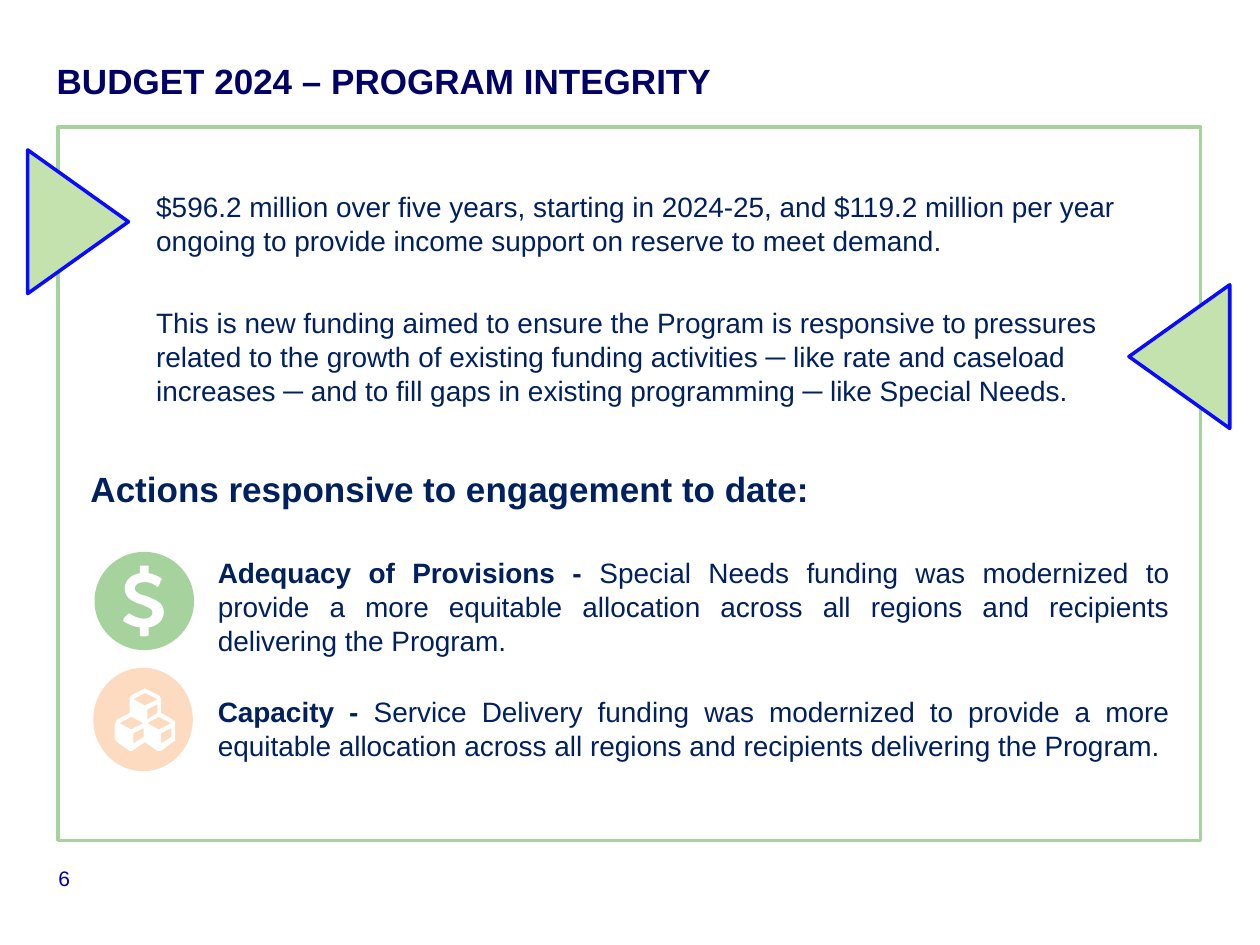
from pptx import Presentation
from pptx.dml.color import RGBColor
from pptx.enum.shapes import MSO_SHAPE
from pptx.enum.text import PP_ALIGN
from pptx.util import Pt

PX = 9144
NAVY = "002060"
GREEN = "A6D39D"
BODY_LINE = 19.4

FUNDING = [
    "$596.2 million over five years, starting in 2024-25, and $119.2 million per year "
    "ongoing to provide income support on reserve to meet demand.",
    "This is new funding aimed to ensure the Program is responsive to pressures related "
    "to the growth of existing funding activities ─ like rate and caseload increases ─ "
    "and to fill gaps in existing programming ─ like Special Needs.",
]
ACTIONS = [
    ("Adequacy of Provisions - ",
     "Special Needs funding was modernized to provide a more equitable allocation "
     "across all regions and recipients delivering the Program."),
    ("Capacity - ",
     "Service Delivery funding was modernized to provide a more equitable allocation "
     "across all regions and recipients delivering the Program."),
]
DOLLAR = [
    (20, 49), (20, 55), (20, 55, 19, 56, 18, 56), (14, 56), (13, 56, 13, 55, 13, 55),
    (13, 49), (5, 48, 0, 44, 0, 44), (0, 43, 0, 43, 0, 42), (4, 38), (5, 38),
    (5, 38, 10, 42, 16, 42), (19, 42, 23, 41, 23, 37), (23, 34, 19, 33, 15, 31),
    (8, 29, 1, 26, 1, 18), (1, 12, 6, 7, 13, 6), (13, 0), (18, 0), (20, 0), (20, 6),
    (26, 7, 30, 10, 30, 10), (31, 11, 31, 11, 30, 11), (28, 16),
    (27, 16, 27, 17, 27, 17), (27, 17, 26, 17, 26, 16), (26, 16, 22, 13, 17, 13),
    (12, 13, 9, 15, 9, 18), (9, 21, 13, 23, 18, 24), (25, 27, 32, 29, 32, 37),
    (32, 43, 27, 48, 20, 49),
]
CUBES = [
    (48, 27), (46, 25), (37, 20), (37, 9), (36, 7), (35, 6), (25, 1), (24, 0), (23, 1),
    (13, 6), (12, 7), (12, 20), (2, 25), (1, 27), (0, 29), (0, 40), (1, 42), (2, 43),
    (12, 50), (14, 50), (24, 43), (34, 50), (37, 50), (46, 43), (48, 42), (48, 29),
]
CUBE_FACES = [
    [(15, 9), (24, 4), (34, 9), (24, 14)],
    [(26, 17), (34, 13), (34, 20), (26, 25)],
]
CUBE_OFFSETS = [(0, 0), (11, 19), (-11, 19)]


def color(value):
    return RGBColor.from_string(value)


def paint(shape, fill=None, line=None):
    shape.shadow.inherit = False
    if fill:
        shape.fill.solid()
        shape.fill.fore_color.rgb = color(fill)
    else:
        shape.fill.background()
    if line:
        shape.line.color.rgb = color(line)
        shape.line.width = Pt(2)
    else:
        shape.line.fill.background()


def add_shape(slide, kind, box, fill=None, line=None):
    shape = slide.shapes.add_shape(kind, *(value * PX for value in box))
    paint(shape, fill, line)
    return shape


def add_text(slide, box, paragraphs, size, text_color, bold=False, line_height=None,
             gap=0, align=PP_ALIGN.LEFT, insets=(0, 0, 0, 0)):
    text_box = slide.shapes.add_textbox(*(value * PX for value in box))
    frame = text_box.text_frame
    frame.word_wrap = True
    (frame.margin_left, frame.margin_top,
     frame.margin_right, frame.margin_bottom) = (value * PX for value in insets)
    frame.text = "\n".join(paragraphs)
    for paragraph in frame.paragraphs:
        paragraph.alignment = align
        if line_height:
            paragraph.line_spacing = Pt(line_height)
        for run in paragraph.runs:
            style_run(run, size, text_color, bold)
    for paragraph in frame.paragraphs[:-1]:
        paragraph.space_after = Pt(gap)
    return frame


def style_run(run, size, text_color, bold):
    run.font.name = "Arial"
    run.font.size = Pt(size)
    run.font.bold = bold
    run.font.color.rgb = color(text_color)


def flatten(outline, steps=8):
    points = [outline[0]]
    for segment in outline[1:]:
        if len(segment) == 2:
            points.append(segment)
            continue
        start = points[-1]
        first, second, end = segment[:2], segment[2:4], segment[4:]
        for step in range(1, steps + 1):
            t = step / steps
            u = 1 - t
            points.append(tuple(
                u ** 3 * a + 3 * u * u * t * b + 3 * u * t * t * c + t ** 3 * d
                for a, b, c, d in zip(start, first, second, end)))
    return points


def add_icon(slide, left, top, contours):
    placed = [[((left + x) * PX, (top + y) * PX) for x, y in flatten(contour)]
              for contour in contours]
    builder = slide.shapes.build_freeform(*placed[0][0])
    for index, points in enumerate(placed):
        if index:
            builder.move_to(*points[0])
        builder.add_line_segments(points[1:], close=True)
    paint(builder.convert_to_shape(), "FFFFFF")


def add_funding(slide, left, top, width, height):
    add_shape(slide, MSO_SHAPE.RECTANGLE, (left, top, width, height), line=GREEN)
    for x, y, rotation in ((left - 24, top + 18, 0), (left + width - 57, top + 125, 180)):
        marker = add_shape(slide, MSO_SHAPE.PENTAGON, (x, y, 80, 114), "C4E2AE", "0A0AFF")
        marker.adjustments[0] = 1
        marker.rotation = rotation
    add_text(slide, (left + 78, top + 49, 806, 177), FUNDING, 16, NAVY,
             line_height=BODY_LINE, gap=27.5)


def add_actions(slide, left, top):
    add_text(slide, (left, top, 593, 44), ["Actions responsive to engagement to date:"],
             20, NAVY, True, line_height=24.3, insets=(10, 5, 10, 5))
    frame = add_text(slide, (left + 101, top + 40, 775, 236),
                     [label for label, detail in ACTIONS], 16, NAVY, True, BODY_LINE,
                     gap=21, align=PP_ALIGN.JUSTIFY, insets=(10, 35, 10, 5))
    for paragraph, (label, detail) in zip(frame.paragraphs, ACTIONS):
        run = paragraph.add_run()
        run.text = detail
        style_run(run, 16, NAVY, False)

    add_shape(slide, MSO_SHAPE.OVAL, (left + 13, top + 72, 79, 78), GREEN)
    add_icon(slide, left + 36, top + 83, [DOLLAR])
    add_shape(slide, MSO_SHAPE.OVAL, (left + 12, top + 164, 79, 82), "FCDBC0")
    faces = [[(x + dx, y + dy) for x, y in face]
             for dx, dy in CUBE_OFFSETS for face in CUBE_FACES]
    add_icon(slide, left + 29, top + 180, [CUBES] + faces)


def main():
    presentation = Presentation()
    presentation.slide_width = 1000 * PX
    presentation.slide_height = 750 * PX
    slide = presentation.slides.add_slide(presentation.slide_layouts[6])
    add_text(slide, (4, 682, 94, 30), ["6"], 12, "0000A3",
             align=PP_ALIGN.CENTER, insets=(10, 5, 10, 5))
    add_text(slide, (45, 47, 907, 64), ["BUDGET 2024 – PROGRAM INTEGRITY"],
             20, "000066", True, line_height=24)
    add_funding(slide, 46, 101, 907, 566)
    add_actions(slide, 62, 366)
    presentation.save("out.pptx")


if __name__ == "__main__":
    main()
